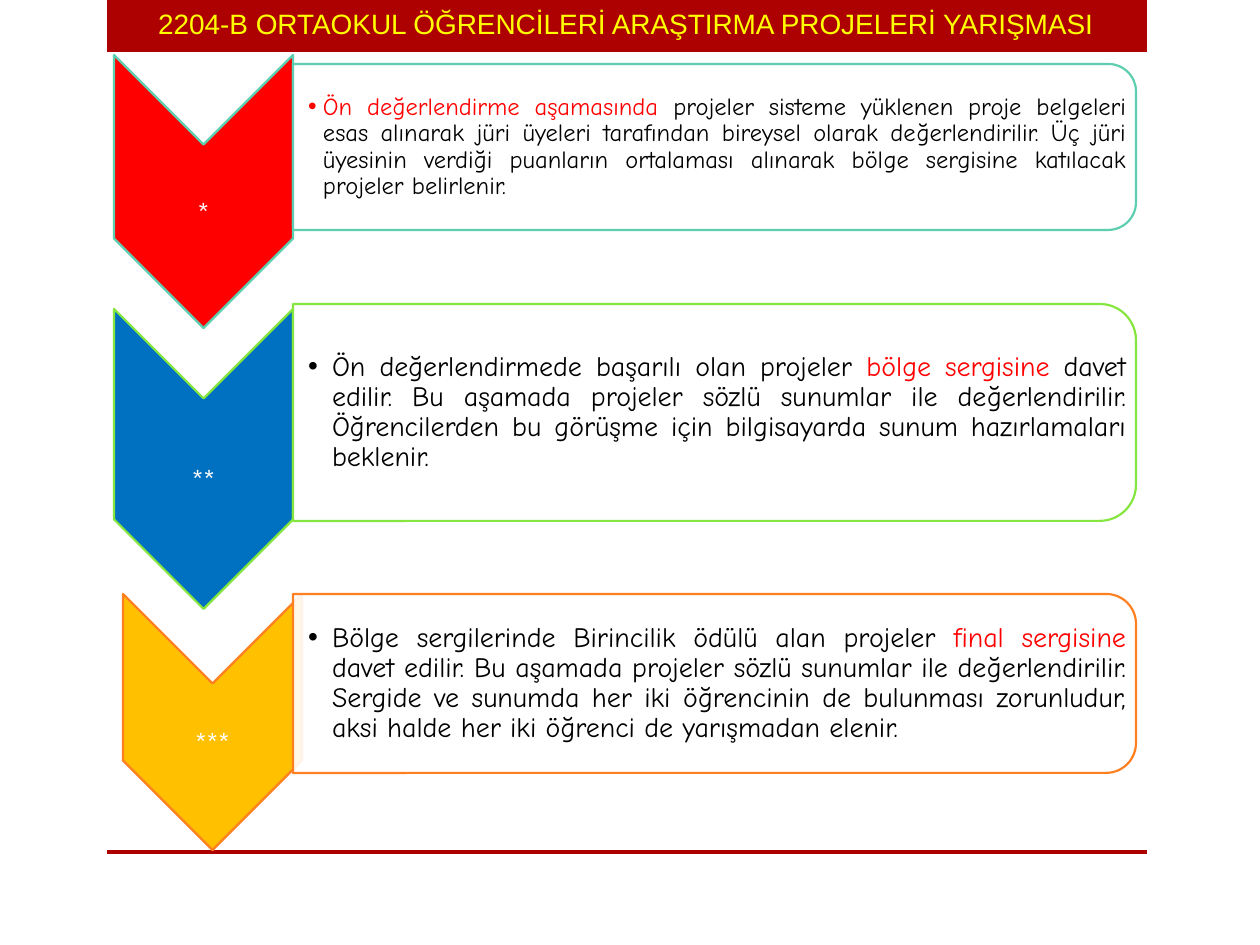
from lxml.etree import SubElement as Sub
from pptx import Presentation
from pptx.dml.color import RGBColor as Rgb
from pptx.enum.shapes import MSO_SHAPE as Shp
from pptx.enum.text import MSO_ANCHOR as Anc, MSO_AUTO_SIZE as Auto, PP_ALIGN as Al
from pptx.oxml.ns import qn
from pptx.util import Emu, Pt

SCALE = 914400 / 126  # EMU in one px

HUES = {
    "bar": "AD0101", "title": "FFFF00", "white": "FFFFFF", "black": "000000",
    "red": "FF0000", "blue": "0070C0", "gold": "FFC000",
    "teal": "5DCEAF", "lime": "86E640", "orange": "FF8021",
}


def px(num):
    return Emu(round(num * SCALE))


class Deck:
    def __init__(self):
        self.prs = Presentation()
        self.prs.slide_width, self.prs.slide_height = px(1260), px(945)
        # The comparison layout has a title and enough bodies for three lists
        self.slide = self.prs.slides.add_slide(self.prs.slide_layouts[4])
        self.shapes = self.slide.shapes
        self.holds = list(self.slide.placeholders)

    def place(self, item, x, y, w, h):
        item.left, item.top, item.width, item.height = map(px, (x, y, w, h))

    def shape(self, kind, box, fill, line=None):
        item = self.shapes.add_shape(kind, *map(px, box))
        item.shadow.inherit = False
        item.fill.solid()
        item.fill.fore_color.rgb = Rgb.from_string(HUES[fill])
        if line:
            item.line.color.rgb = Rgb.from_string(HUES[line])
            item.line.width = Pt(1.25)
        else:
            item.line.fill.background()
        return item

    def turned(self, kind, box, fill, line):
        """Shape turned by 90 degrees that covers the given box."""
        x, y, w, h = box
        item = self.shape(kind, (x + (w - h) / 2, y + (h - w) / 2, h, w), fill, line)
        item.rotation = 90
        return item

    def panel(self, box, line):
        item = self.turned(Shp.ROUND_2_SAME_RECTANGLE, box, "white", line)
        hue = item.fill._xPr.find(".//" + qn("a:srgbClr"))
        Sub(hue, qn("a:alpha"), val="90000")

    def frame(self, item, pads):
        text = item.text_frame
        text.word_wrap, text.auto_size = True, Auto.NONE
        text.vertical_anchor = Anc.MIDDLE
        (text.margin_left, text.margin_top,
         text.margin_right, text.margin_bottom) = map(px, pads)
        return text

    def style(self, run, face, size, hue):
        run.font.name, run.font.size, run.font.bold = face, Pt(size), False
        run.font.color.rgb = Rgb.from_string(HUES[hue])

    def line(self, item, words, pads, face, hue):
        text = self.frame(item, pads)
        text.text = words
        para = text.paragraphs[0]
        para.alignment = Al.CENTER
        self.style(para.runs[0], face, 16, hue)

    def title(self, box, words):
        item = self.holds.pop(0)
        self.place(item, *box)
        item.element.getparent().append(item.element)
        self.line(item, words, (12, 6, 12, 6), "Arial", "title")

    def stars(self, box, words):
        item = self.shapes.add_textbox(*map(px, box))
        self.line(item, words, (1, 40, 1, 1), "Karla", "white")

    def bullet(self, box, parts, size, dent):
        item = self.holds.pop(0)
        self.place(item, *box)
        item.element.getparent().append(item.element)  # in front of its panel
        para = self.frame(item, (15, 1, 1, 1)).paragraphs[0]
        para.alignment, para.line_spacing = Al.JUSTIFY, 0.9
        para.space_before = Pt(0)
        for words, hue in parts:
            run = para.add_run()
            run.text = words
            self.style(run, "Comic Neue", size, hue)
        props = para._p.get_or_add_pPr()
        props.set("marL", str(px(dent)))
        props.set("indent", str(-px(dent)))
        Sub(props, qn("a:buFont"), typeface="Arial")
        Sub(props, qn("a:buChar"), char="•")

    def save(self):
        for item in self.holds:
            item.element.getparent().remove(item.element)
        self.prs.save("out.pptx")


# Each stage: chevron x, y, height; panel y, height; fill, line; size, indent; text
STAGES = [
    (114, 55, 273, 64, 166, "red", "teal", 14, 15, [
        ("Ön değerlendirme aşamasında ", "red"),
        ("projeler sisteme yüklenen proje belgeleri esas alınarak jüri üyeleri "
         "tarafından bireysel olarak değerlendirilir. Üç jüri üyesinin verdiği "
         "puanların ortalaması alınarak bölge sergisine katılacak projeler "
         "belirlenir.", "black")]),
    (114, 309, 300, 304, 217, "blue", "lime", 16, 24, [
        ("Ön değerlendirmede başarılı olan projeler ", "black"),
        ("bölge sergisine", "red"),
        (" davet edilir. Bu aşamada projeler sözlü sunumlar ile değerlendirilir. "
         "Öğrencilerden bu görüşme için bilgisayarda sunum hazırlamaları "
         "beklenir.", "black")]),
    (123, 594, 256, 594, 179, "gold", "orange", 16, 24, [
        ("Bölge sergilerinde Birincilik ödülü alan projeler ", "black"),
        ("final sergisine ", "red"),
        ("davet edilir. Bu aşamada projeler sözlü sunumlar ile değerlendirilir. "
         "Sergide ve sunumda her iki öğrencinin de bulunması zorunludur, aksi "
         "halde her iki öğrenci de yarışmadan elenir.", "black")]),
]
WIDE, POINT = 179, 89  # chevron width and depth of its point


def main():
    deck = Deck()

    # Header and footer bars
    for y, h in ((0, 52), (850, 4)):
        deck.shape(Shp.RECTANGLE, (107, y, 1040, h), "bar")
    deck.title((105, 0, 1042, 47),
               "2204-B ORTAOKUL ÖĞRENCİLERİ ARAŞTIRMA PROJELERİ YARIŞMASI")

    # Stages: chevron, stars, panel and its list
    for num, stage in enumerate(STAGES, 1):
        x, y, h, top, tall, fill, line, size, dent, parts = stage
        deck.turned(Shp.CHEVRON, (x, y, WIDE, h), fill, line)
        deck.stars((x, y + POINT, WIDE, h - 2 * POINT), "*" * num)
        deck.panel((293, top, 843, tall), line)
        deck.bullet((293, top + 8, 834, tall - 16), parts, size, dent)

    deck.save()


if __name__ == "__main__":
    main()
